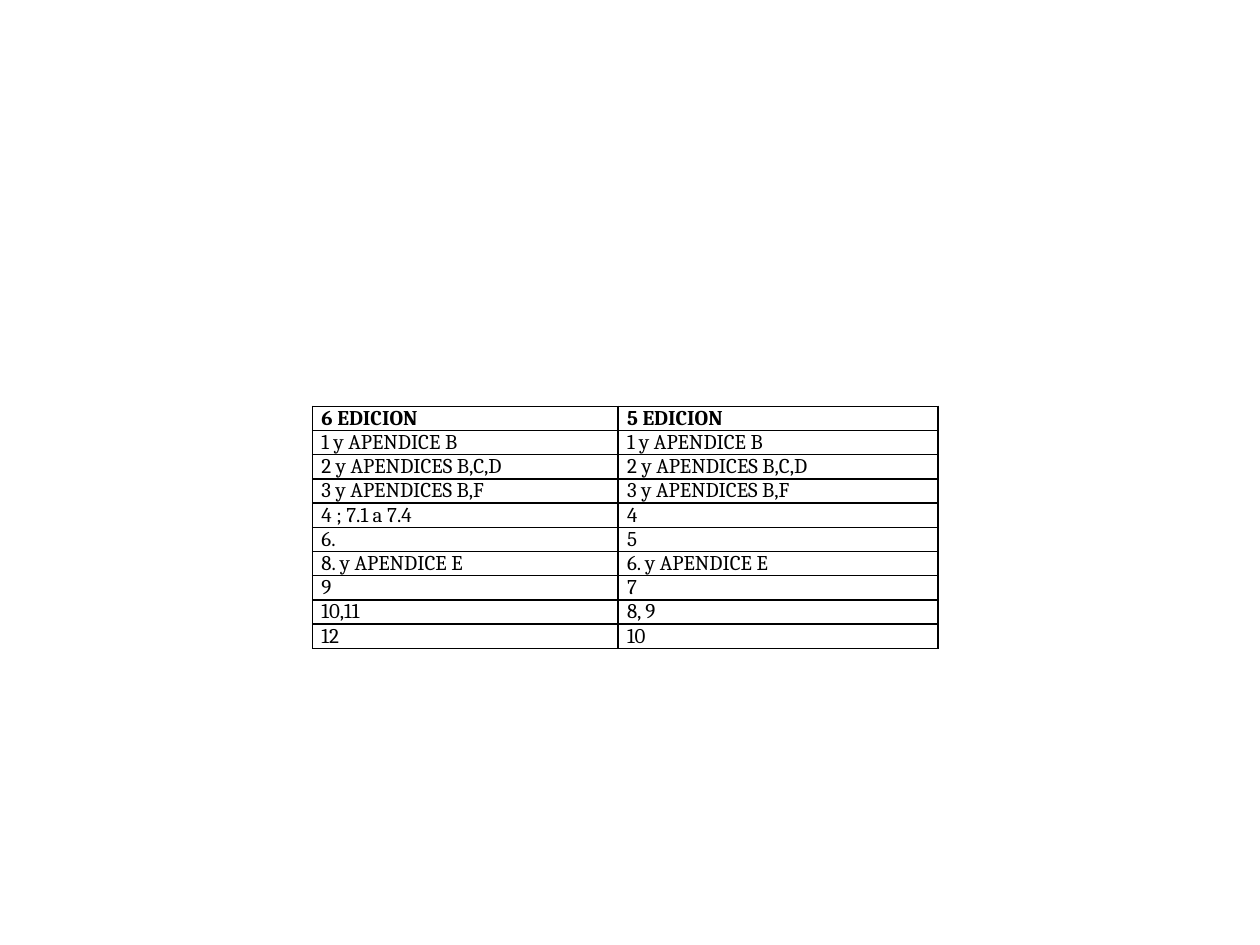
from lxml.etree import SubElement
from pptx import Presentation
from pptx.dml.color import RGBColor as Rgb
from pptx.oxml.ns import qn
from pptx.util import Cm, Pt

COLORS = {"text": "000000", "border": "000000", "cell": "FFFFFF"}

CHAPTERS = [
    ("6 EDICION", "5 EDICION"),
    ("1 y APENDICE B", "1 y APENDICE B"),
    ("2 y APENDICES B,C,D", "2 y APENDICES B,C,D"),
    ("3 y APENDICES B,F", "3 y APENDICES B,F"),
    ("4 ; 7.1 a 7.4", "4"),
    ("6.", "5"),
    ("8. y APENDICE E", "6. y APENDICE E"),
    ("9", "7"),
    ("10,11", "8, 9"),
    ("12", "10"),
]


def write_text(frame, text, *, font="Cambria", size=12, bold=False, color="text"):
    run = frame.paragraphs[0].add_run()
    run.text = text
    run.font.name = font
    run.font.size = Pt(size)
    run.font.bold = bold
    run.font.color.rgb = Rgb.from_string(COLORS[color])


class SlideBuilder:
    """Holds the current slide and the table style."""

    border_width = Pt(1)
    side_margin = Cm(0.18)

    def __init__(self, slide):
        self.slide = slide

    def add_borders(self, cell):
        properties = cell._tc.get_or_add_tcPr()
        for side in ("lnL", "lnR", "lnT", "lnB"):
            line = SubElement(properties, qn(f"a:{side}"), w=str(self.border_width))
            fill = SubElement(line, qn("a:solidFill"))
            SubElement(fill, qn("a:srgbClr"), val=COLORS["border"])

    def add_cell(self, cell, text, bold):
        cell.margin_left = cell.margin_right = self.side_margin
        cell.margin_top = cell.margin_bottom = 0
        self.add_borders(cell)
        cell.fill.solid()
        cell.fill.fore_color.rgb = Rgb.from_string(COLORS["cell"])
        write_text(cell.text_frame, text, bold=bold)

    def add_table(self, rows, left, top, column_widths, row_height):
        table = self.slide.shapes.add_table(
            len(rows), len(column_widths), left, top,
            sum(column_widths), row_height * len(rows),
        ).table
        table.horz_banding = False
        for column, width in zip(table.columns, column_widths):
            column.width = width
        for row_index, texts in enumerate(rows):
            for column_index, text in enumerate(texts):
                self.add_cell(table.cell(row_index, column_index), text, row_index == 0)


def main():
    presentation = Presentation()
    presentation.slide_width = Cm(25.4)
    presentation.slide_height = Cm(19.05)
    blank_layout = presentation.slide_layouts[6]
    builder = SlideBuilder(presentation.slides.add_slide(blank_layout))
    builder.add_table(
        CHAPTERS, Cm(6.3), Cm(8.19),
        column_widths=(Cm(6.16), Cm(6.45)), row_height=Cm(0.48),
    )
    presentation.save("out.pptx")


if __name__ == "__main__":
    main()
